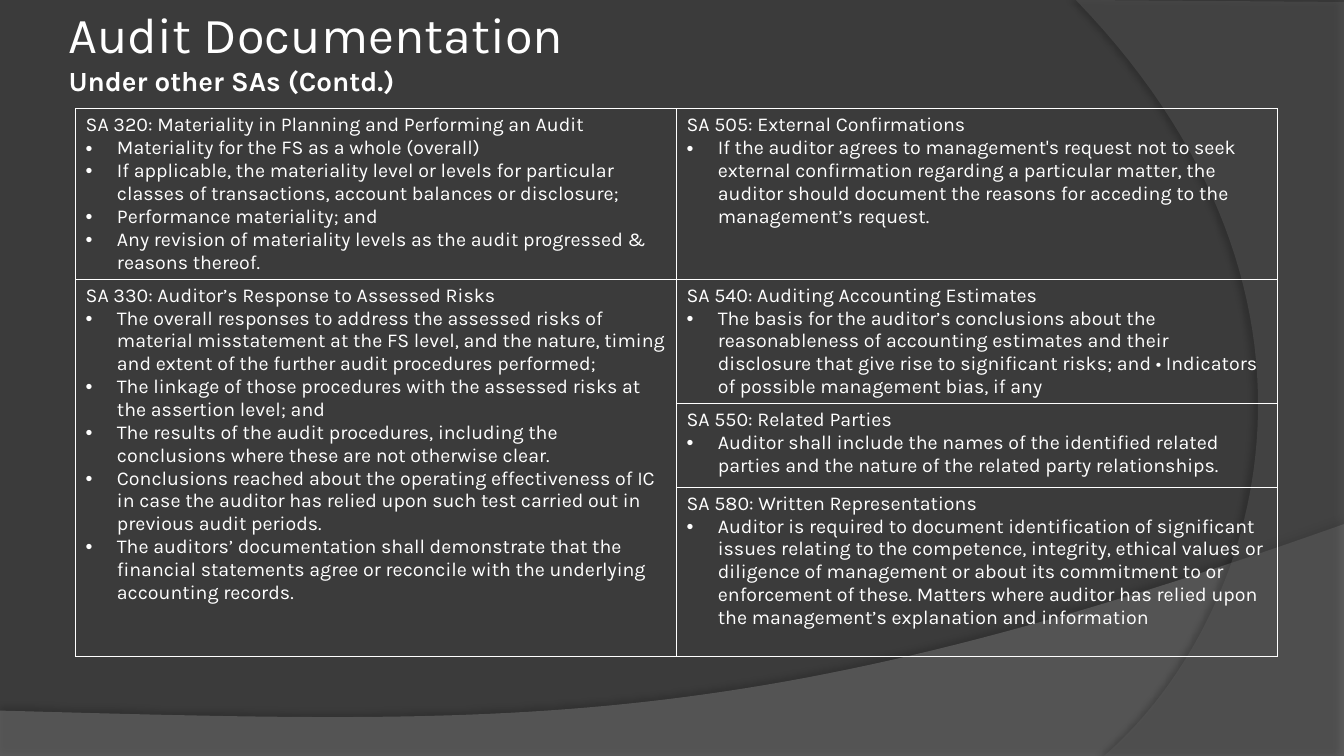
from dataclasses import dataclass

from lxml import etree
from pptx import Presentation
from pptx.dml.color import RGBColor
from pptx.enum.text import MSO_ANCHOR, MSO_AUTO_SIZE, PP_ALIGN
from pptx.oxml.ns import qn
from pptx.util import Inches, Pt

MIDDLE = MSO_ANCHOR.MIDDLE
NO_AUTOFIT = MSO_AUTO_SIZE.NONE
LEFT = PP_ALIGN.LEFT


@dataclass(frozen=True)
class Theme:
    font: str = "Karla"
    background: str = "3B3B3B"
    text: str = "FFFFFF"
    wave: str = "7F7F7F"
    arc: str = "5E5E5E"
    shadow: str = "000000"
    title_size: float = 36
    subtitle_size: float = 19.8
    body_size: float = 14
    border_width: float = 1
    indent: float = 0.31


def add_xml(parent, tag, **attrs):
    return etree.SubElement(parent, qn(tag), {k: str(v) for k, v in attrs.items()})


def add_color(parent, color, alpha=None):
    clr = add_xml(parent, "a:srgbClr", val=color)
    if alpha is not None:
        add_xml(clr, "a:alpha", val=alpha * 1000)


def bezier(p0, p1, p2, p3, steps=60):
    """Points along a cubic curve, both ends included."""
    points = []
    for i in range(steps + 1):
        t = i / steps
        weights = ((1 - t) ** 3, 3 * t * (1 - t) ** 2, 3 * t * t * (1 - t), t ** 3)
        points.append(tuple(sum(w * p[axis] for w, p in zip(weights, (p0, p1, p2, p3)))
                            for axis in (0, 1)))
    return points


class SlideBuilder:
    def __init__(self, slide, theme):
        self.slide = slide
        self.theme = theme
        fill = slide.background.fill
        fill.solid()
        fill.fore_color.rgb = RGBColor.from_string(theme.background)

    def style_run(self, r, size, bold=False):
        r.font.name = self.theme.font
        r.font.size = Pt(size)
        r.font.bold = bold
        r.font.color.rgb = RGBColor.from_string(self.theme.text)

    def backdrop(self, points, color, alpha, shadow_alpha, distance, angle):
        """Translucent outline with a soft shadow, placed behind the title."""
        points = [(Inches(x), Inches(y)) for x, y in points]
        builder = self.slide.shapes.build_freeform(*points[0])
        builder.add_line_segments(points[1:], close=True)
        sp = builder.convert_to_shape()
        sp.fill.solid()
        sp.fill.fore_color.rgb = RGBColor.from_string(color)
        clr = sp.fill._xPr.find(qn("a:solidFill"))[0]
        add_xml(clr, "a:alpha", val=alpha * 1000)
        sp.line.fill.background()
        sp.shadow.inherit = False
        effects = sp._element.spPr.find(qn("a:effectLst"))
        shadow = add_xml(effects, "a:outerShdw", blurRad=Pt(4), dist=Pt(distance),
                         dir=angle * 60000, algn="ctr", rotWithShape=0)
        add_color(shadow, self.theme.shadow, shadow_alpha)
        title = self.slide.shapes.title._element
        title.addprevious(sp._element)

    def title(self, heading, subtitle, left, top, width, height):
        sp = self.slide.shapes.title
        sp.left, sp.top, sp.width, sp.height = map(Inches, (left, top, width, height))
        tf = sp.text_frame
        tf.text = f"{heading}\v{subtitle}"
        tf.word_wrap = True
        tf.auto_size = NO_AUTOFIT
        tf.vertical_anchor = MIDDLE
        tf.margin_left = tf.margin_right = tf.margin_top = tf.margin_bottom = Inches(0.05)
        p = tf.paragraphs[0]
        p.alignment = LEFT
        self.style_run(p.runs[0], self.theme.title_size)
        self.style_run(p.runs[1], self.theme.subtitle_size, bold=True)

    def cell_borders(self, cell):
        tcPr = cell._tc.get_or_add_tcPr()
        for i, side in enumerate(("a:lnL", "a:lnR", "a:lnT", "a:lnB")):
            ln = add_xml(tcPr, side, w=Pt(self.theme.border_width))
            add_color(add_xml(ln, "a:solidFill"), self.theme.text)
            tcPr.insert(i, ln)

    def cell_text(self, cell, heading, bullets):
        tf = cell.text_frame
        tf.text = "\n".join([heading, *bullets])
        for i, p in enumerate(tf.paragraphs):
            self.style_run(p.runs[0], self.theme.body_size)
            if i:
                pPr = p._p.get_or_add_pPr()
                indent = Inches(self.theme.indent)
                pPr.set("marL", str(indent))
                pPr.set("indent", str(-indent))
                add_xml(pPr, "a:buFont", typeface="Arial")
                add_xml(pPr, "a:buChar", char="•")

    def table(self, left, top, col_width, row_heights, contents, merges):
        """contents maps (row, column) to a heading and its bullets."""
        cols = 1 + max(col for _, col in contents)
        frame = self.slide.shapes.add_table(
            len(row_heights), cols, Inches(left), Inches(top),
            Inches(col_width * cols), Inches(sum(row_heights)))
        table = frame.table
        table.first_row = table.horz_banding = False
        for column in table.columns:
            column.width = Inches(col_width)
        for row, height in zip(table.rows, row_heights):
            row.height = Inches(height)
        for cell in table.iter_cells():
            cell.fill.background()
            self.cell_borders(cell)
        for first, last in merges:
            table.cell(*first).merge(table.cell(*last))
        for position, (heading, bullets) in contents.items():
            self.cell_text(table.cell(*position), heading, bullets)


STANDARDS = {
    (0, 0): ("SA 320: Materiality in Planning and Performing an Audit", [
        "Materiality for the FS as a whole (overall)",
        "If applicable, the materiality level or levels for particular classes of "
        "transactions, account balances or disclosure;",
        "Performance materiality; and",
        "Any revision of materiality levels as the audit progressed & reasons thereof."]),
    (0, 1): ("SA 505: External Confirmations", [
        "If the auditor agrees to management's request not to seek external confirmation "
        "regarding a particular matter, the auditor should document the reasons for "
        "acceding to the management’s request."]),
    (1, 0): ("SA 330: Auditor’s Response to Assessed Risks", [
        "The overall responses to address the assessed risks of material misstatement at "
        "the FS level, and the nature, timing and extent of the further audit procedures "
        "performed;",
        "The linkage of those procedures with the assessed risks at the assertion level; and",
        "The results of the audit procedures, including the conclusions where these are "
        "not otherwise clear.",
        "Conclusions reached about the operating effectiveness of IC in case the auditor "
        "has relied upon such test carried out in previous audit periods.",
        "The auditors’ documentation shall demonstrate that the financial statements agree "
        "or reconcile with the underlying accounting records."]),
    (1, 1): ("SA 540: Auditing Accounting Estimates", [
        "The basis for the auditor’s conclusions about the reasonableness of accounting "
        "estimates and their disclosure that give rise to significant risks; and "
        "• Indicators of possible management bias, if any"]),
    (2, 1): ("SA 550: Related Parties", [
        "Auditor shall include the names of the identified related parties and the nature "
        "of the related party relationships."]),
    (3, 1): ("SA 580: Written Representations", [
        "Auditor is required to document identification of significant issues relating to "
        "the competence, integrity, ethical values or diligence of management or about its "
        "commitment to or enforcement of these. Matters where auditor has relied upon the "
        "management’s explanation and information"]),
}


def main():
    prs = Presentation()
    prs.slide_width, prs.slide_height = Inches(13.33), Inches(7.5)
    theme = Theme()
    s = SlideBuilder(prs.slides.add_slide(prs.slide_layouts[5]), theme)

    wave = bezier((13.33, 5.2), (7.45, 7.29), (5.21, 7.19), (0, 7.05))
    s.backdrop([(0, 7.5), (13.33, 7.5), *wave], theme.wave, alpha=45,
               shadow_alpha=35, distance=3.5, angle=270)
    arc = bezier((10.95, 7.5), (12.46, 6.19), (13.57, 3), (10.67, 0))
    s.backdrop([(13.33, 0.02), (13.33, 7.5), *arc], theme.arc, alpha=40,
               shadow_alpha=45, distance=4, angle=180)

    s.title("Audit Documentation ", "Under other SAs (Contd.)", 0.63, 0, 10.89, 1)
    s.table(0.75, 1.08, 5.96, [1.69, 1.23, 0.83, 1.68], STANDARDS,
            merges=[((1, 0), (3, 0))])
    prs.save("out.pptx")


if __name__ == "__main__":
    main()
